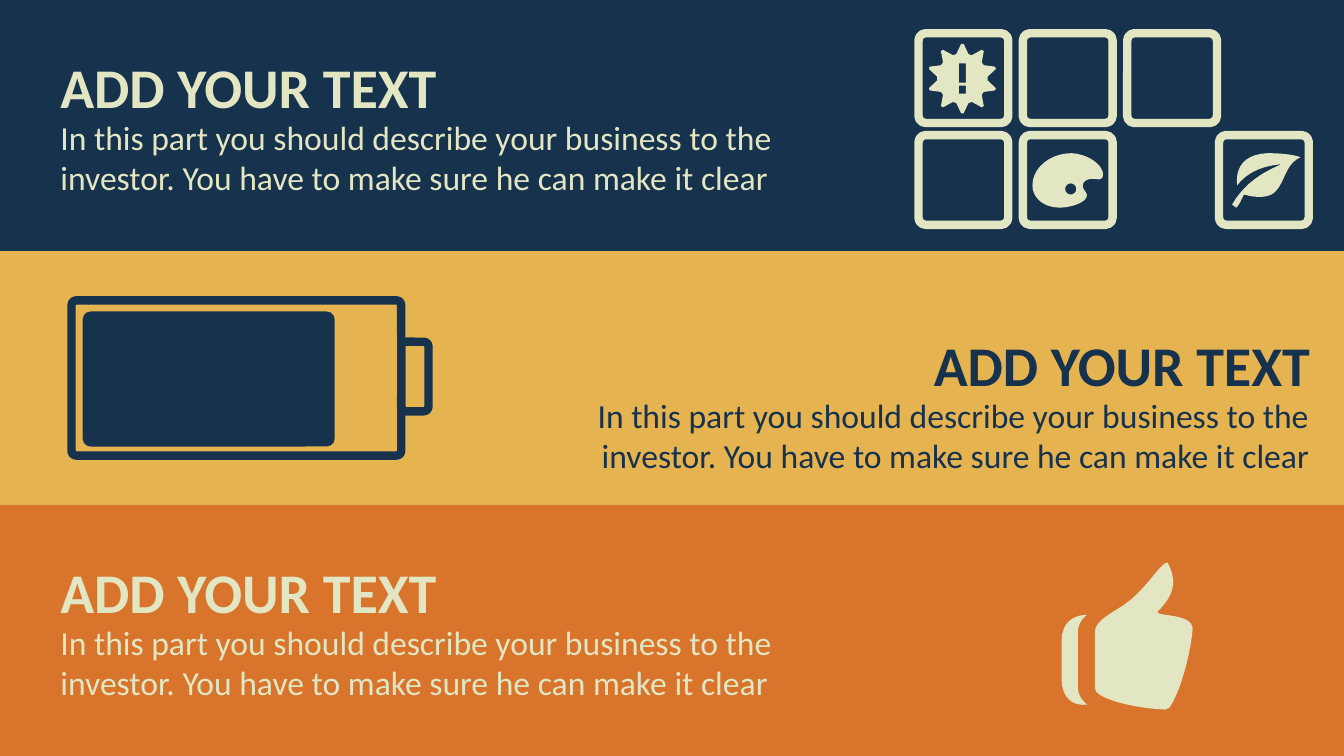
from math import cos, radians, sin

from pptx import Presentation
from pptx.dml.color import RGBColor
from pptx.enum.shapes import MSO_SHAPE
from pptx.enum.text import MSO_AUTO_SIZE, PP_ALIGN
from pptx.util import Inches, Pt

NAVY, GOLD, ORANGE, CREAM = "17324D", "E5B350", "D9742C", "E2E6C3"
SLIDE_WIDTH, SLIDE_HEIGHT = 13.33, 7.5
HEADING = "ADD YOUR TEXT"
BODY = ("In this part you should describe your business to the investor. "
        "You have to make sure he can make it clear")

# Icon edges in hundredths of an inch. Each edge starts where the last one ended:
# one point draws a straight line, three points (two controls, end) draw a curve.
LEAF = {
    "tip": [(68, 4)],
    "upper edge": [(60, 1), (46, 0), (35, 0)],
    "left edge": [(12, 1), (3, 14), (5, 32)],
    "vein above": [(17, 16), (36, 12), (49, 11)],
    "vein below": [(30, 19), (12, 30), (0, 51)],
    "stem end": [(4, 54)],
    "stem": [(8, 51), (10, 43), (12, 41)],
    "lower edge": [(22, 44), (35, 45), (42, 39)],
    "right edge": [(53, 29), (52, 11), (68, 4)],
}
PALETTE = {
    "top": [(39, 0)],
    "right edge": [(56, 1), (70, 12), (70, 21)],
    "rounded corner": [(70, 25), (68, 26), (65, 26)],
    "notch": [(57, 24), (50, 27), (50, 32)],
    "notch end": [(50, 37), (54, 38), (54, 42)],
    "bottom edge": [(54, 48), (40, 54), (27, 54)],
    "lower left": [(12, 54), (0, 45), (0, 32)],
    "upper left": [(0, 14), (18, 0), (39, 0)],
}
CUFF = {
    "upper tip": [(25, 52)],
    "upper corner": [(12, 52), (0, 60), (0, 77)],
    "outer side": [(0, 116)],
    "lower corner": [(0, 133), (10, 143), (25, 141)],
    "lower inside": [(20, 136), (16, 132), (16, 122)],
    "inner side": [(16, 71)],
    "upper inside": [(16, 60), (21, 56), (25, 52)],
}
HAND = {
    "thumb tip": [(105, 0)],
    "thumb front": [(116, 20), (110, 34), (95, 49)],
    "knuckles": [(94, 54), (128, 50), (130, 65)],
    "fingers": [(128, 92), (117, 130), (107, 144)],
    "little finger": [(103, 146)],
    "palm": [(72, 145), (33, 135), (33, 125)],
    "wrist": [(33, 69)],
    "thumb base": [(33, 58), (50, 50), (62, 42)],
    "thumb back": [(84, 27), (98, 0), (105, 0)],
}


def color(hex_value):
    return RGBColor.from_string(hex_value)


# Outline geometry
def curve(points, steps=10):
    """Points along a cubic Bezier curve, without its start."""
    for step in range(1, steps + 1):
        t = step / steps
        weights = ((1 - t) ** 3, 3 * t * (1 - t) ** 2, 3 * t * t * (1 - t), t ** 3)
        yield tuple(sum(weight * point[axis] for weight, point in zip(weights, points))
                    for axis in (0, 1))


def trace(edges):
    outline = []
    for points in edges.values():
        outline += points if len(points) == 1 else curve([outline[-1], *points])
    return outline


def polar(center, radius, degrees):
    """Point at a clockwise angle from straight up."""
    angle = radians(degrees)
    return center[0] + radius * sin(angle), center[1] - radius * cos(angle)


def circle(center, radius):
    return [polar(center, radius, degrees) for degrees in range(0, 360, 15)]


def starburst(center, spikes=10, outer=34.5, inner=25):
    spike = ((-2, outer), (2, outer), (14, inner), (22, inner))
    return [polar(center, radius, number * 360 / spikes + turn)
            for number in range(spikes) for turn, radius in spike]


def rectangle(left, top, width, height):
    right, bottom = left + width, top + height
    return [(left, top), (left, bottom), (right, bottom), (right, top)]


# Drawing
def paint(shape, fill=None, line=None):
    shape.shadow.inherit = False
    if fill:
        shape.fill.solid()
        shape.fill.fore_color.rgb = color(fill)
    else:
        shape.fill.background()
    if line:
        shape.line.color.rgb = color(line)
        shape.line.width = Pt(6)
    else:
        shape.line.fill.background()


def add_box(parent, box, fill=None, line=None, radius=None):
    kind = MSO_SHAPE.RECTANGLE if radius is None else MSO_SHAPE.ROUNDED_RECTANGLE
    shape = parent.shapes.add_shape(kind, *map(Inches, box))
    if radius is not None:
        shape.adjustments[0] = radius
    paint(shape, fill, line)


def add_icon(parent, left, top, *outlines):
    first, *others = [[(Inches(left + x / 100), Inches(top + y / 100)) for x, y in outline]
                      for outline in outlines]
    builder = parent.shapes.build_freeform(*first[0])
    builder.add_line_segments(first[1:], close=True)
    for points in others:
        builder.move_to(*points[0])
        builder.add_line_segments(points[1:], close=True)
    paint(builder.convert_to_shape(), CREAM)


def add_text(parent, box, text, align, text_color, **formats):
    frame = parent.shapes.add_textbox(*map(Inches, box)).text_frame
    frame.word_wrap = True
    frame.auto_size = MSO_AUTO_SIZE.SHAPE_TO_FIT_TEXT
    paragraph = frame.paragraphs[0]
    paragraph.alignment = align
    run = paragraph.add_run()
    run.text = text
    for name, value in {"name": "Calibri", **formats}.items():
        setattr(run.font, name, value)
    run.font.color.rgb = color(text_color)


def add_message(parent, top, text_color, heading_left=0.5, body_left=0.5,
                body_width=7.42, align=PP_ALIGN.LEFT):
    add_text(parent, (heading_left, top, 5.42, 0.77), HEADING, align, text_color,
             size=Pt(40), bold=True)
    add_text(parent, (body_left, top + 0.64, body_width, 0.91), BODY, align, text_color,
             size=Pt(24))


def add_battery(parent):
    add_box(parent, (0.71, 2.98, 3.27, 1.54), line=NAVY, radius=0.03)  # case
    add_box(parent, (3.98, 3.39, 0.27, 0.69), line=NAVY, radius=0.17)  # terminal
    add_box(parent, (0.82, 3.09, 2.5, 1.34), fill=NAVY, radius=0.06)  # charge


def add_tiles(parent):
    size, upper, lower = 0.89, 0.33, 1.34
    columns = [9.11 + 1.035 * number for number in range(3)]
    tiles = [(left, upper) for left in columns]
    tiles += [(left, lower) for left in columns[:2] + [12.09]]
    for left, top in tiles:
        add_box(parent, (left, top, size, size), line=CREAM, radius=0.08)

    # Outlines after the first are holes
    add_icon(parent, 12.22, 1.52, trace(LEAF))
    add_icon(parent, 9.23, 0.44, starburst((31.5, 34)),
             rectangle(28, 19, 7, 19), rectangle(28, 41, 7, 8))
    add_icon(parent, 10.24, 1.52, trace(PALETTE), circle((38, 35.5), 5.5))


def main():
    presentation = Presentation()
    presentation.slide_width = Inches(SLIDE_WIDTH)
    presentation.slide_height = Inches(SLIDE_HEIGHT)
    slide = presentation.slides.add_slide(presentation.slide_layouts[6])
    slide.background.fill.solid()
    slide.background.fill.fore_color.rgb = color(CREAM)

    # Colour bands
    edges = (0, 2.49, 5.01, SLIDE_HEIGHT)
    for top, bottom, fill in zip(edges, edges[1:], (NAVY, GOLD, ORANGE)):
        add_box(slide, (0, top, SLIDE_WIDTH, bottom - top), fill=fill)

    # Each band groups a message with its picture
    middle, upper, lower = (slide.shapes.add_group_shape() for _ in range(3))
    add_message(middle, 3.23, NAVY, heading_left=7.67, body_left=5.24,
                body_width=7.84, align=PP_ALIGN.RIGHT)
    add_battery(middle)
    add_message(upper, 0.47, CREAM)
    add_tiles(upper)
    add_message(lower, 5.48, CREAM)
    add_icon(lower, 10.53, 5.58, trace(CUFF), trace(HAND))

    presentation.save("out.pptx")


if __name__ == "__main__":
    main()
